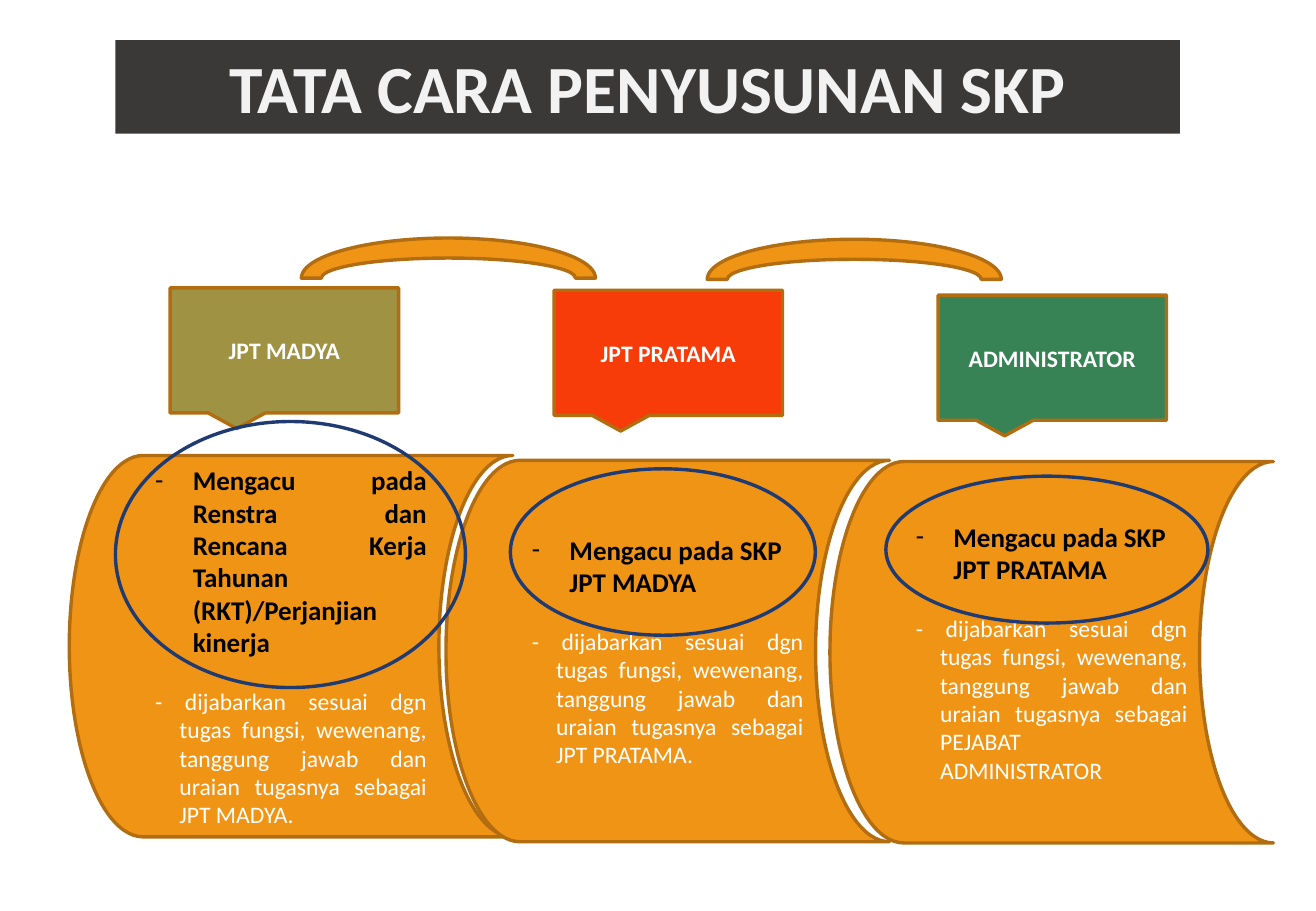
import pptx
import pptx.util
import pptx.dml.color
import pptx.enum.shapes
import pptx.enum.text
import pptx.oxml.ns
import lxml.etree

Inches = pptx.util.Inches
Pt = pptx.util.Pt
RGBColor = pptx.dml.color.RGBColor
Shape = pptx.enum.shapes.MSO_SHAPE
Align = pptx.enum.text.PP_ALIGN
Anchor = pptx.enum.text.MSO_ANCHOR

ORANGE = RGBColor(0xF0, 0x94, 0x15)
BROWN = RGBColor(0xB2, 0x6D, 0x10)
NAVY = RGBColor(0x1F, 0x3B, 0x72)
OLIVE = RGBColor(0x9F, 0x92, 0x42)
RED = RGBColor(0xF7, 0x3C, 0x09)
GREEN = RGBColor(0x38, 0x83, 0x56)
CHARCOAL = RGBColor(0x3B, 0x38, 0x38)
PALE = RGBColor(0xF2, 0xF2, 0xF2)
WHITE = RGBColor(0xFF, 0xFF, 0xFF)
BLACK = RGBColor(0, 0, 0)

DUTY = "- dijabarkan sesuai dgn tugas fungsi, wewenang, tanggung jawab dan uraian tugasnya sebagai"

LEVELS = [
    {
        "name": "JPT MADYA", "color": OLIVE, "callout_top": 2.37,
        "panel": (0.57, 3.75), "ellipse": (0.95, 3.47, 2.88, 2.19),
        "basis": "Mengacu pada Renstra dan Rencana Kerja Tahunan (RKT)/Perjanjian kinerja",
        "basis_align": Align.JUSTIFY, "duty": DUTY + "\nJPT MADYA.",
    },
    {
        "name": "JPT PRATAMA", "color": RED, "callout_top": 2.39,
        "panel": (3.67, 3.79), "ellipse": (4.2, 3.86, 2.51, 1.37),
        "basis": "Mengacu pada SKP JPT MADYA",
        "basis_align": Align.LEFT, "duty": DUTY + " JPT PRATAMA.",
    },
    {
        "name": "ADMINISTRATOR", "color": GREEN, "callout_top": 2.43,
        "panel": (6.83, 3.8), "ellipse": (7.29, 3.92, 2.65, 1.21),
        "basis": "Mengacu pada SKP JPT PRATAMA",
        "basis_align": Align.LEFT, "duty": DUTY + " PEJABAT ADMINISTRATOR",
    },
]
ARCS = [(2.48, 1.96), (5.82, 1.97)]


def write_text(para, text, size=14, color=WHITE, bold=False, align=Align.CENTER,
               hang=0, bullet=None, before=0):
    properties = para._p.get_or_add_pPr()
    if hang:
        properties.set("marL", str(Inches(hang)))
        properties.set("indent", str(-Inches(hang)))
    if bullet:
        for tag, name, value in (("a:buFont", "typeface", "Calibri"), ("a:buChar", "char", bullet)):
            mark = lxml.etree.SubElement(properties, pptx.oxml.ns.qn(tag))
            mark.set(name, value)
    para.alignment = align
    if before:
        para.space_before = Pt(before)
    for number, line in enumerate(text.split("\n")):
        if number:
            para.add_line_break()
        span = para.add_run()
        span.text = line
        span.font.name = "Calibri"
        span.font.size = Pt(size)
        span.font.bold = bold
        span.font.color.rgb = color


def add_outlined(page, kind, left, top, width, height, fill=None, line=BROWN):
    shape = page.shapes.add_shape(kind, Inches(left), Inches(top), Inches(width), Inches(height))
    shape.shadow.inherit = False
    if fill is None:
        shape.fill.background()
    else:
        shape.fill.solid()
        shape.fill.fore_color.rgb = fill
    shape.line.color.rgb = line
    shape.line.width = Pt(2)
    shape.text_frame.word_wrap = True
    shape.text_frame.vertical_anchor = Anchor.MIDDLE
    return shape


def set_title(page, text):
    title = page.shapes.title
    title.left, title.top = Inches(0.95), Inches(0.33)
    title.width, title.height = Inches(8.76), Inches(0.77)
    title.fill.solid()
    title.fill.fore_color.rgb = CHARCOAL
    title.text_frame.auto_size = pptx.enum.text.MSO_AUTO_SIZE.NONE
    title.text_frame.vertical_anchor = Anchor.MIDDLE
    write_text(title.text_frame.paragraphs[0], text, size=40, color=PALE, bold=True)


def add_panel(page, level):
    panel = add_outlined(page, Shape.FLOWCHART_STORED_DATA, *level["panel"], 3.65, 3.14, fill=ORANGE)
    frame = panel.text_frame
    write_text(frame.paragraphs[0], level["basis"], size=16, color=BLACK, bold=True,
               align=level["basis_align"], hang=0.31, bullet="-")
    write_text(frame.add_paragraph(), level["duty"], align=Align.JUSTIFY, hang=0.2, before=17)


def add_callout(page, level, left):
    callout = add_outlined(page, Shape.RECTANGULAR_CALLOUT, left, level["callout_top"],
                           1.88, 1.03, fill=level["color"])
    write_text(callout.text_frame.paragraphs[0], level["name"], bold=True)


def main():
    deck = pptx.Presentation()
    deck.slide_width, deck.slide_height = Inches(10.83), Inches(7.5)
    page = deck.slides.add_slide(deck.slide_layouts[5])
    set_title(page, "TATA CARA PENYUSUNAN SKP")
    for level in LEVELS:
        add_panel(page, level)
    for column, level in enumerate(LEVELS):
        add_callout(page, level, 1.4 + 3.16 * column)
    for left, top in ARCS:
        add_outlined(page, Shape.BLOCK_ARC, left, top, 2.42, 0.66, fill=ORANGE)
    for level in LEVELS:
        add_outlined(page, Shape.OVAL, *level["ellipse"], line=NAVY)
    deck.save("out.pptx")


if __name__ == "__main__":
    main()
